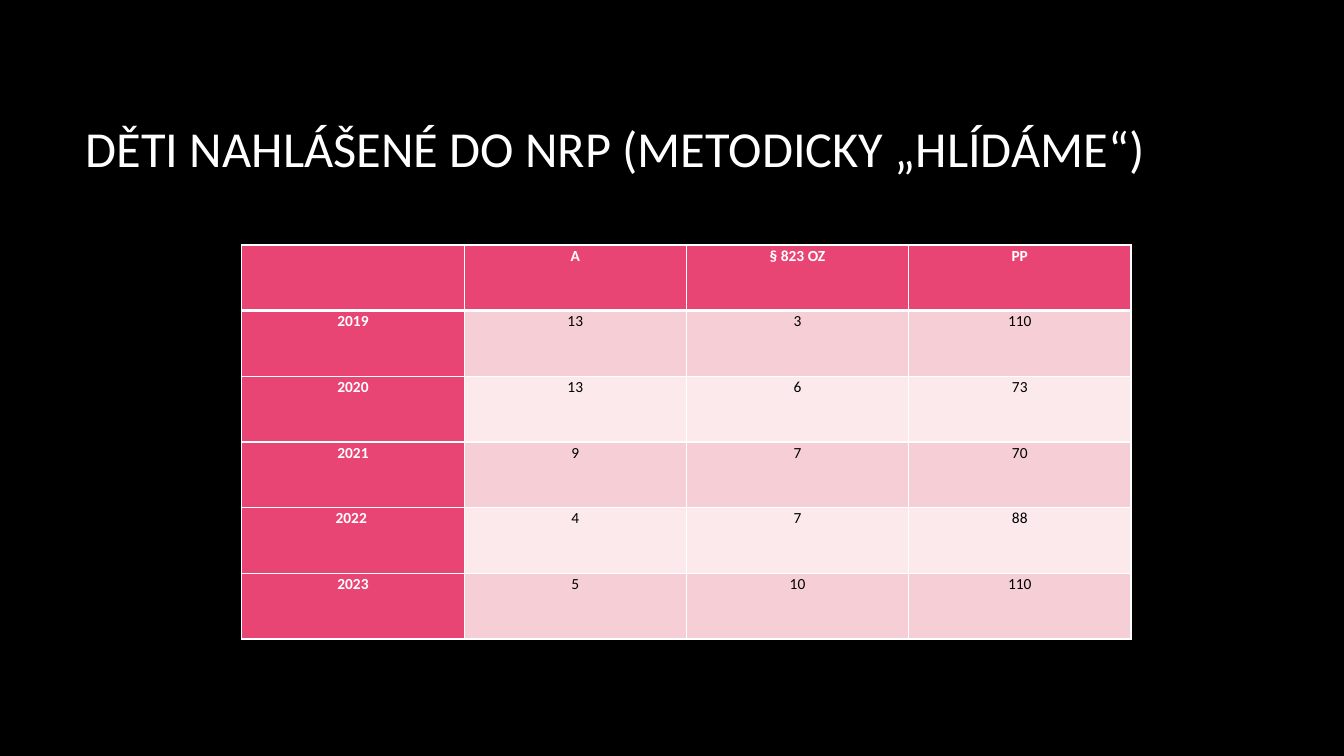
import dataclasses

import lxml.etree
import pptx
import pptx.dml.color
import pptx.enum.text
import pptx.oxml.ns
import pptx.util


@dataclasses.dataclass(frozen=True)
class Theme:
    font: str = "Calibri"
    background: str = "000000"
    light: str = "FFFFFF"
    dark: str = "000000"
    accent: str = "E84574"
    bands: tuple = ("F6CFD6", "FBE9EB")
    title_size: float = 36
    table_size: float = 11
    thin_border: float = 1
    thick_border: float = 3


TITLE = "DĚTI NAHLÁŠENÉ DO NRP (METODICKY „HLÍDÁME“)"
CHILDREN_BY_YEAR = [
    ["", "A", "§ 823 OZ", "PP"],
    ["2019", "13", "3", "110"],
    ["2020", "13", "6", "73"],
    ["2021", "9", "7", "70"],
    ["2022 ", "4", "7", "88"],
    ["2023", "5", "10", "110"],
]
TITLE_AREA = (5.63, 8.93, 83.1, 21.2)
TABLE_AREA = (18, 32.4, 66.15, 52.13)


def rgb(color):
    return pptx.dml.color.RGBColor.from_string(color)


def set_attributes(target, values):
    for name, value in values.items():
        setattr(target, name, value)


class SlideBuilder:
    """Draws on one slide; areas are left, top, width, height in percent of it."""

    def __init__(self, presentation, theme):
        self.presentation = presentation
        self.theme = theme
        self.slide = presentation.slides.add_slide(presentation.slide_layouts[5])
        background = self.slide.background.fill
        background.solid()
        background.fore_color.rgb = rgb(theme.background)

    def place(self, area):
        width, height = self.presentation.slide_width, self.presentation.slide_height
        return [round(share * length / 100)
                for share, length in zip(area, (width, height, width, height))]

    def set_text(self, paragraph, text, size, color, bold, **paragraph_format):
        paragraph.text = text
        set_attributes(paragraph, paragraph_format)
        set_attributes(paragraph.font, {
            "name": self.theme.font, "size": pptx.util.Pt(size), "bold": bold})
        paragraph.font.color.rgb = rgb(color)

    def title(self, text, area):
        title = self.slide.shapes.title
        set_attributes(title, dict(zip(("left", "top", "width", "height"), self.place(area))))
        set_attributes(title.text_frame, {
            "word_wrap": True,
            "auto_size": pptx.enum.text.MSO_AUTO_SIZE.NONE,
            "vertical_anchor": pptx.enum.text.MSO_ANCHOR.MIDDLE})
        self.set_text(title.text_frame.paragraphs[0], text, self.theme.title_size,
                      self.theme.light, False, alignment=pptx.enum.text.PP_ALIGN.LEFT)

    def table(self, rows, area):
        table = self.slide.shapes.add_table(len(rows), len(rows[0]), *self.place(area)).table
        for row_index, row in enumerate(rows):
            for column_index, text in enumerate(row):
                self.cell(table.cell(row_index, column_index), text, row_index, column_index)

    def cell(self, cell, text, row_index, column_index):
        theme = self.theme
        heading = row_index == 0 or column_index == 0
        set_attributes(cell, {
            "margin_left": pptx.util.Inches(0.07), "margin_right": pptx.util.Inches(0.07),
            "margin_top": 0, "margin_bottom": 0})
        cell.fill.solid()
        band = theme.bands[(row_index - 1) % len(theme.bands)]
        cell.fill.fore_color.rgb = rgb(theme.accent if heading else band)
        self.set_text(cell.text_frame.paragraphs[0], text, theme.table_size,
                      theme.light if heading else theme.dark, heading,
                      alignment=pptx.enum.text.PP_ALIGN.CENTER,
                      line_spacing=1.07, space_after=pptx.util.Pt(8))
        self.borders(cell, {
            "lnL": theme.thin_border,
            "lnR": theme.thin_border,
            "lnT": theme.thick_border if row_index == 1 else theme.thin_border,
            "lnB": theme.thick_border if row_index == 0 else theme.thin_border})

    def borders(self, cell, widths):
        """Insert the border lines ahead of the cell's fill, as the schema orders them."""
        qualified = pptx.oxml.ns.qn
        properties = cell._tc.get_or_add_tcPr()
        for position, (side, width) in enumerate(widths.items()):
            line = lxml.etree.Element(qualified(f"a:{side}"), w=str(pptx.util.Pt(width)))
            fill = lxml.etree.SubElement(line, qualified("a:solidFill"))
            lxml.etree.SubElement(fill, qualified("a:srgbClr"), val=self.theme.light)
            properties.insert(position, line)


def main():
    presentation = pptx.Presentation()
    set_attributes(presentation, {
        "slide_width": pptx.util.Inches(13.33), "slide_height": pptx.util.Inches(7.5)})
    builder = SlideBuilder(presentation, Theme())
    builder.title(TITLE, TITLE_AREA)
    builder.table(CHILDREN_BY_YEAR, TABLE_AREA)
    presentation.save("out.pptx")


if __name__ == "__main__":
    main()
